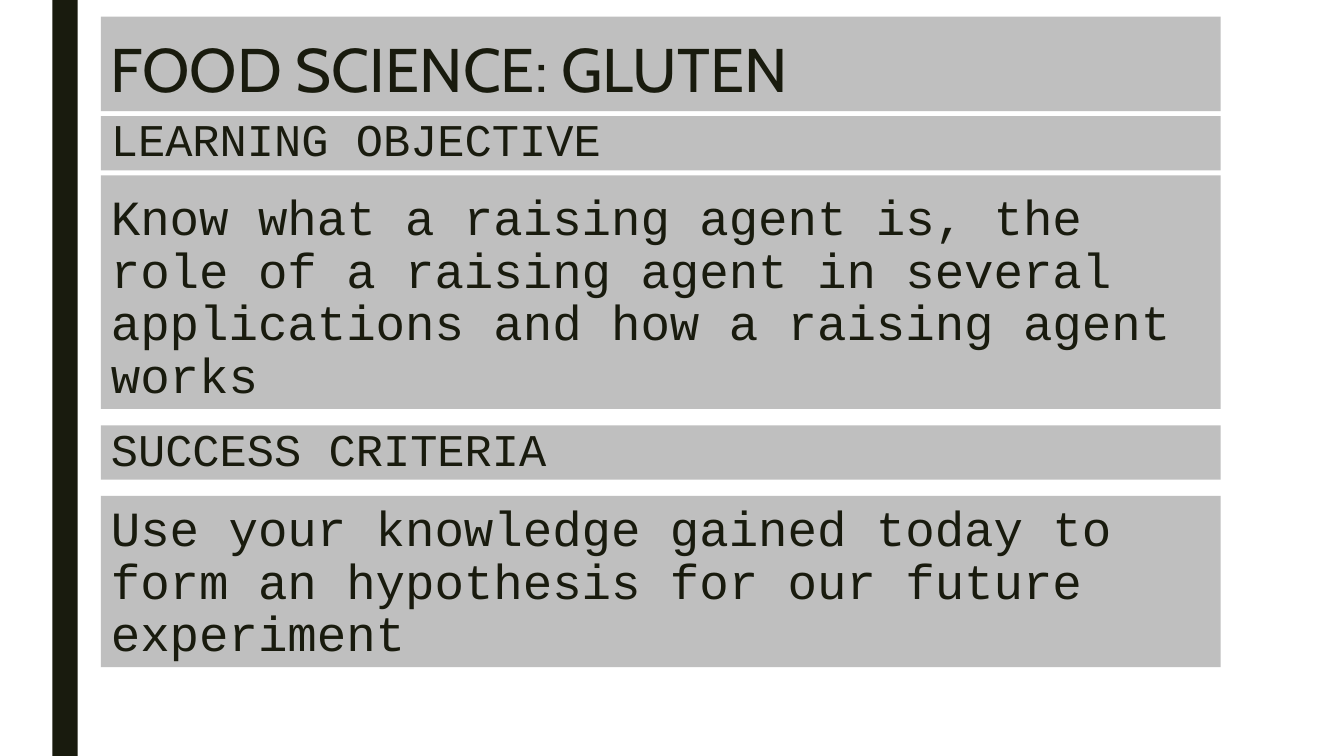
from dataclasses import dataclass

from lxml import etree
from pptx import Presentation
from pptx.dml.color import RGBColor
from pptx.enum.shapes import MSO_SHAPE
from pptx.enum.text import MSO_ANCHOR, MSO_AUTO_SIZE, PP_ALIGN
from pptx.oxml.ns import qn
from pptx.util import Inches, Pt

RECT = MSO_SHAPE.RECTANGLE
BOTTOM = MSO_ANCHOR.BOTTOM
FIXED = MSO_AUTO_SIZE.NONE
LEFT = PP_ALIGN.LEFT

WIDTH, HEIGHT = Inches(13.33), Inches(7.5)
COLS, ROWS = 120, 100
COMPARISON = 4


@dataclass(frozen=True)
class Style:
    font: str
    size: float
    leading: float


@dataclass(frozen=True)
class Theme:
    ink: RGBColor = RGBColor(0x19, 0x1B, 0x0E)
    panel: RGBColor = RGBColor(0xBF, 0xBF, 0xBF)
    title: Style = Style("Cabin", 44, 0.89)
    head: Style = Style("Courier New", 32.4, 0.79)
    body: Style = Style("Courier New", 35.1, 0.89)


@dataclass(frozen=True)
class Area:
    col: float
    row: float
    cols: float
    rows: float

    def box(self) -> dict[str, int]:
        """Turn grid units into slide lengths."""
        return {
            "left": round(WIDTH * self.col / COLS),
            "top": round(HEIGHT * self.row / ROWS),
            "width": round(WIDTH * self.cols / COLS),
            "height": round(HEIGHT * self.rows / ROWS),
        }


@dataclass(frozen=True)
class Panel:
    slot: int
    row: float
    rows: float
    style: Style
    text: str


THEME = Theme()
BAR = Area(4.68, 0, 2.25, ROWS)
PANELS = [
    Panel(0, 2.2, 12.5, THEME.title, "FOOD SCIENCE: GLUTEN"),
    Panel(1, 15.35, 7.2, THEME.head, "LEARNING OBJECTIVE"),
    Panel(2, 23.2, 30.9, THEME.body,
          "Know what a raising agent is, the role of a raising agent in "
          "several applications and how a raising agent works"),
    Panel(3, 56.25, 7.2, THEME.head, "SUCCESS CRITERIA"),
    Panel(4, 65.6, 22.65, THEME.body,
          "Use your knowledge gained today to form an hypothesis for our "
          "future experiment"),
]


def assign(target: object, values: dict[str, object]) -> None:
    for name, value in values.items():
        setattr(target, name, value)


def paint(shape, color: RGBColor) -> None:
    shape.fill.solid()
    shape.fill.fore_color.rgb = color
    shape.line.fill.background()


def draw_bar(slide) -> None:
    bar = slide.shapes.add_shape(RECT, **BAR.box())
    bar.shadow.inherit = False
    paint(bar, THEME.ink)


def draw_panel(slide, panel: Panel) -> None:
    shape = slide.placeholders[panel.slot]
    assign(shape, Area(9, panel.row, 100, panel.rows).box())
    paint(shape, THEME.panel)
    frame = shape.text_frame
    assign(frame, {"word_wrap": True, "auto_size": FIXED,
                   "vertical_anchor": BOTTOM})

    para = frame.paragraphs[0]
    props = para._p.get_or_add_pPr()
    props.set("marL", "0")
    props.set("indent", "0")
    etree.SubElement(props, qn("a:buNone"))
    assign(para, {"alignment": LEFT, "space_before": Pt(0),
                  "line_spacing": panel.style.leading})

    run = para.add_run()
    run.text = panel.text
    assign(run.font, {"name": panel.style.font, "bold": False,
                      "size": Pt(panel.style.size)})
    run.font.color.rgb = THEME.ink


def main() -> None:
    deck = Presentation()
    assign(deck, {"slide_width": WIDTH, "slide_height": HEIGHT})
    slide = deck.slides.add_slide(deck.slide_layouts[COMPARISON])
    draw_bar(slide)
    for panel in PANELS:
        draw_panel(slide, panel)
    deck.save("out.pptx")


if __name__ == "__main__":
    main()
